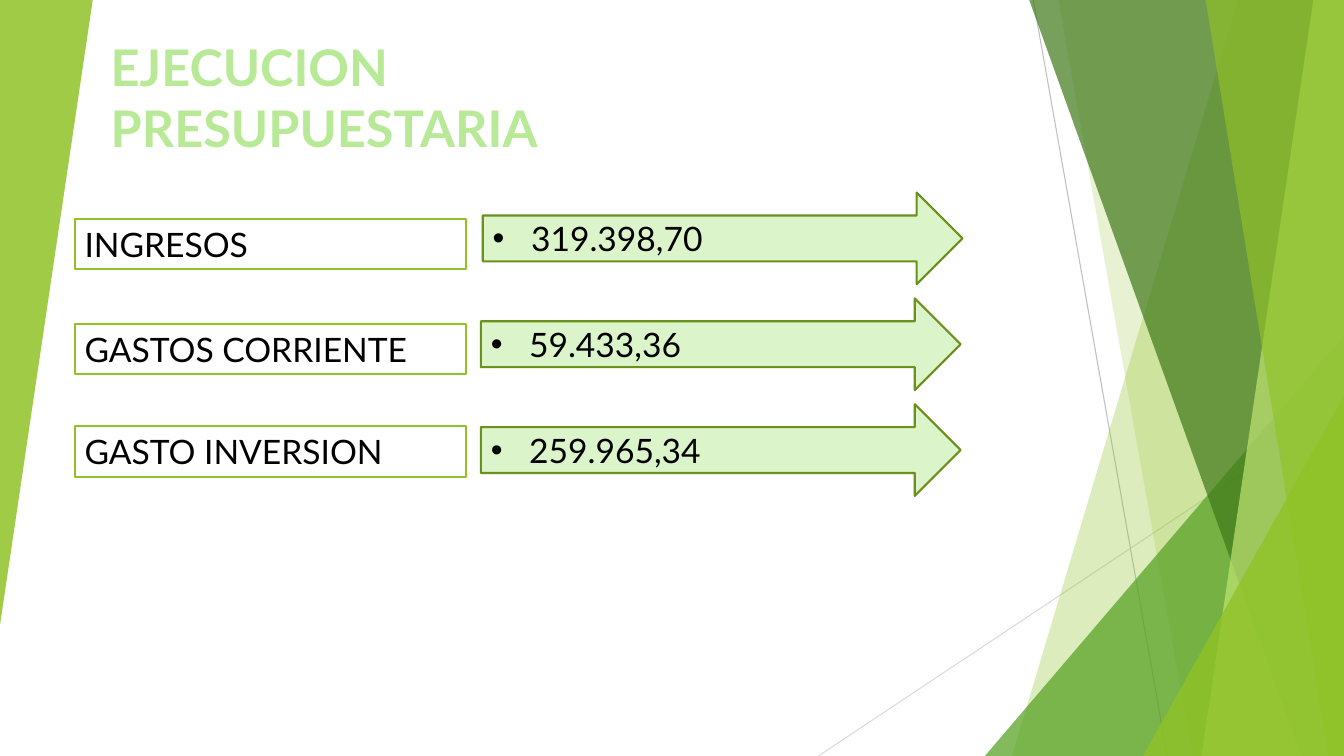
from dataclasses import dataclass

import lxml.etree
import pptx
import pptx.dml.color
import pptx.enum.shapes
import pptx.enum.text
import pptx.oxml
import pptx.oxml.ns
import pptx.util

SHAPE = pptx.enum.shapes.MSO_SHAPE
ANCHOR = pptx.enum.text.MSO_ANCHOR
FIT = pptx.enum.text.MSO_AUTO_SIZE
WIDTH, HEIGHT = pptx.util.Inches(13.33), pptx.util.Inches(7.5)
GREEN = "90C226"
BODY_FONT = {"name": "Lato", "size": pptx.util.Pt(24), "bold": False}
TITLE_FONT = {"name": "Lato", "size": pptx.util.Pt(36), "bold": True}


# All positions and sizes are percentages of the slide's width or height.
@dataclass
class Box:
    left: float
    top: float
    width: float
    height: float

    def emu(self) -> tuple:
        return across(self.left), down(self.top), across(self.width), down(self.height)


@dataclass
class Ray:
    start: tuple
    end: tuple
    color: str


@dataclass
class Band:
    """Runs from top to bottom and reaches the right edge."""
    top_left: float
    bottom_left: float
    color: str
    opacity: int


@dataclass
class Wedge:
    box: Box
    color: str
    opacity: int
    rotation: int = 0


@dataclass
class BudgetLine:
    label: str
    amount: str
    label_top: float
    arrow_left: float


RAYS = [
    Ray((76.88, 0), (86.85, 100), "BFBFBF"),
    Ray((100, 53.73), (60.9, 100), "D9D9D9"),
]
FACETS = [
    Band(92.1, 75.3, GREEN, 30),
    Band(78.75, 88.72, GREEN, 20),
    Wedge(Box(73.28, 44.4, 26.72, 55.6), "54A021", 72),
    Band(76.58, 96.82, "3F7819", 70),
    Band(97.72, 89.4, "C0E474", 70),
    Band(89.7, 98.85, GREEN, 65),
    Wedge(Box(85.05, 52.4, 14.95, 47.6), GREEN, 80),
    Wedge(Box(0, 0, 6.9, 82.67), GREEN, 85, rotation=180),
]
BUDGET = [
    BudgetLine("INGRESOS", "319.398,70", 28.93, 35.92),
    BudgetLine("GASTOS CORRIENTE", "59.433,36", 42.8, 35.78),
    BudgetLine("GASTO INVERSION", "259.965,34", 56.4, 35.78),
]
ARROW_TOP, ARROW_PITCH = 25.47, 14


def across(share: float) -> int:
    return round(WIDTH * share / 100)


def down(share: float) -> int:
    return round(HEIGHT * share / 100)


def rgb(color: str) -> pptx.dml.color.RGBColor:
    return pptx.dml.color.RGBColor.from_string(color)


def add_xml(parent, tag: str, **attributes: str):
    return lxml.etree.SubElement(parent, pptx.oxml.ns.qn(tag), attributes)


def apply(target, values: dict) -> None:
    for name, value in values.items():
        setattr(target, name, value)


def paint(shape, color: str, opacity: int = 100, outline: str = "") -> None:
    shape.shadow.inherit = False
    shape.fill.solid()
    shape.fill.fore_color.rgb = rgb(color)
    if opacity < 100:
        srgb = shape.fill._xPr.find(".//" + pptx.oxml.ns.qn("a:srgbClr"))
        add_xml(srgb, "a:alpha", val=str(opacity * 1000))
    if outline:
        shape.line.color.rgb = rgb(outline)
        shape.line.width = pptx.util.Pt(1.5)
    else:
        shape.line.fill.background()


def write(shape, text: str, font: dict, color: str, frame: dict):
    apply(shape.text_frame, {"word_wrap": True, **frame})
    paragraph = shape.text_frame.paragraphs[0]
    paragraph.alignment = pptx.enum.text.PP_ALIGN.LEFT
    run = paragraph.add_run()
    run.text = text
    apply(run.font, font)
    run.font.color.rgb = rgb(color)
    return paragraph


def draw_ray(shapes, ray: Ray) -> None:
    (x1, y1), (x2, y2) = ray.start, ray.end
    line = shapes.add_connector(pptx.enum.shapes.MSO_CONNECTOR.STRAIGHT,
                                across(x1), down(y1), across(x2), down(y2))
    line.line.color.rgb = rgb(ray.color)
    line.line.width = pptx.util.Pt(0.75)
    add_xml(line._element.spPr, "a:effectLst")


def draw_band(shapes, band: Band) -> None:
    builder = shapes.build_freeform(across(band.top_left), 0)
    builder.add_line_segments([(WIDTH, 0), (WIDTH, HEIGHT), (across(band.bottom_left), HEIGHT)])
    paint(builder.convert_to_shape(), band.color, band.opacity)


def draw_wedge(shapes, wedge: Wedge) -> None:
    triangle = shapes.add_shape(SHAPE.ISOSCELES_TRIANGLE, *wedge.box.emu())
    triangle.adjustments[0] = 1
    triangle.rotation = wedge.rotation
    paint(triangle, wedge.color, wedge.opacity)


def draw_title(shapes) -> None:
    title = shapes.add_textbox(*Box(7.5, 4.13, 49.2, 17.47).emu())
    paragraph = write(title, "EJECUCION PRESUPUESTARIA", TITLE_FONT, "B7E996",
                      {"auto_size": FIT.SHAPE_TO_FIT_TEXT})
    # Letter outline comes first among the run properties
    properties = paragraph.runs[0].font._element
    outline = add_xml(properties, "a:ln", w=str(pptx.util.Pt(1.75)))
    add_xml(add_xml(outline, "a:solidFill"), "a:srgbClr", val="54A021")
    properties.insert(0, outline)


def draw_budget_line(shapes, index: int, entry: BudgetLine) -> None:
    label = shapes.add_shape(SHAPE.RECTANGLE, *Box(5.55, entry.label_top, 29.1, 6.67).emu())
    paint(label, "FFFFFF", outline=GREEN)
    write(label, entry.label, BODY_FONT, "000000",
          {"auto_size": FIT.SHAPE_TO_FIT_TEXT, "vertical_anchor": ANCHOR.TOP})

    arrow_box = Box(entry.arrow_left, ARROW_TOP + index * ARROW_PITCH, 35.7, 12.13)
    arrow = shapes.add_shape(SHAPE.RIGHT_ARROW, *arrow_box.emu())
    paint(arrow, "DBF4CA", outline="6B901C")
    amount = write(arrow, entry.amount, BODY_FONT, "000000", {"vertical_anchor": ANCHOR.MIDDLE})
    # Bullet with a hanging indent
    indent = pptx.util.Inches(0.38)
    properties = amount._p.get_or_add_pPr()
    properties.set("marL", str(indent))
    properties.set("indent", str(-indent))
    add_xml(properties, "a:buFont", typeface="Arial")
    add_xml(properties, "a:buChar", char="•")


def main() -> None:
    presentation = pptx.Presentation()
    apply(presentation, {"slide_width": WIDTH, "slide_height": HEIGHT})
    shapes = presentation.slides.add_slide(presentation.slide_layouts[6]).shapes

    # Background facets
    for ray in RAYS:
        draw_ray(shapes, ray)
    for facet in FACETS:
        if isinstance(facet, Band):
            draw_band(shapes, facet)
        else:
            draw_wedge(shapes, facet)

    # Content
    draw_title(shapes)
    for index, entry in enumerate(BUDGET):
        draw_budget_line(shapes, index, entry)

    presentation.save("out.pptx")


if __name__ == "__main__":
    main()
